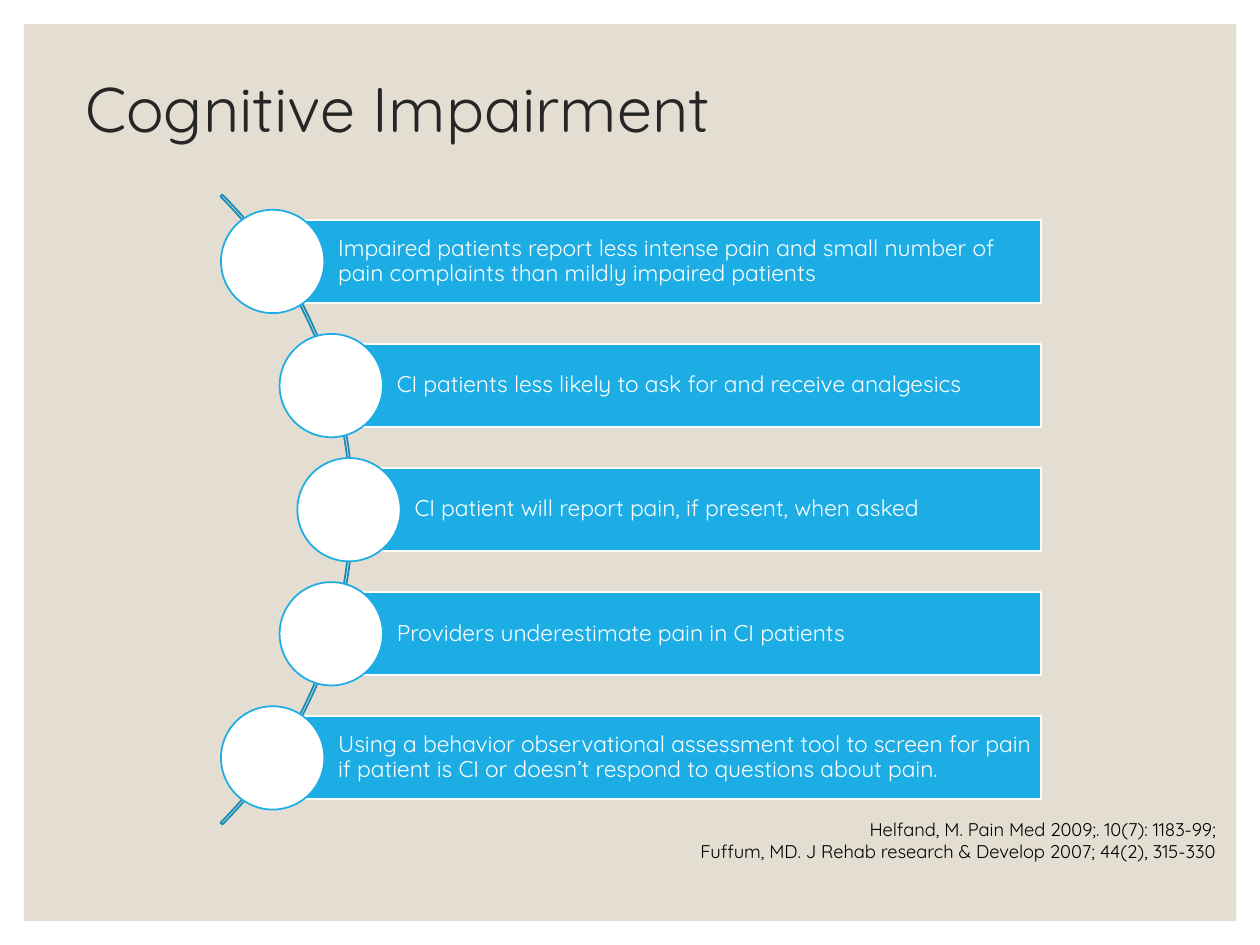
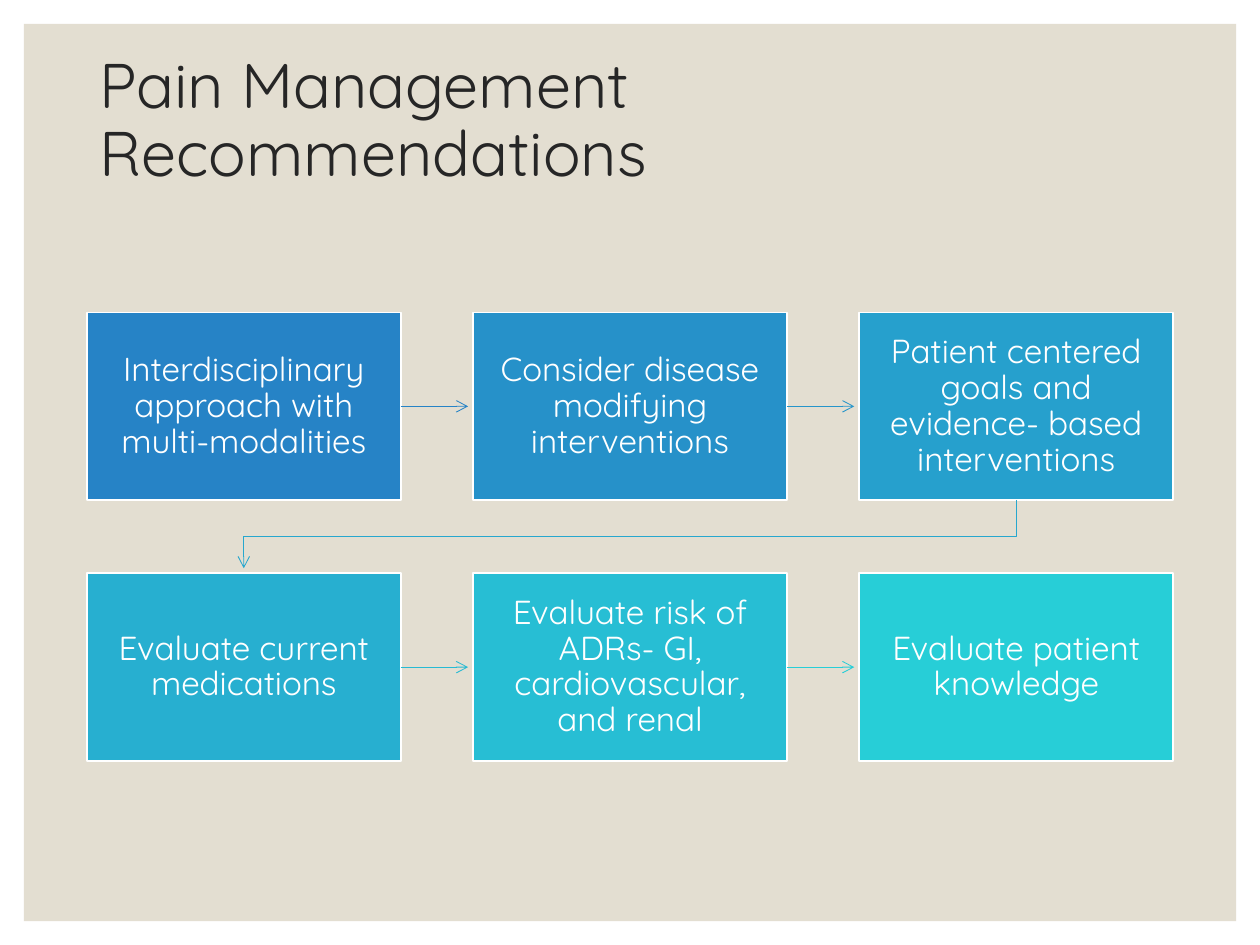
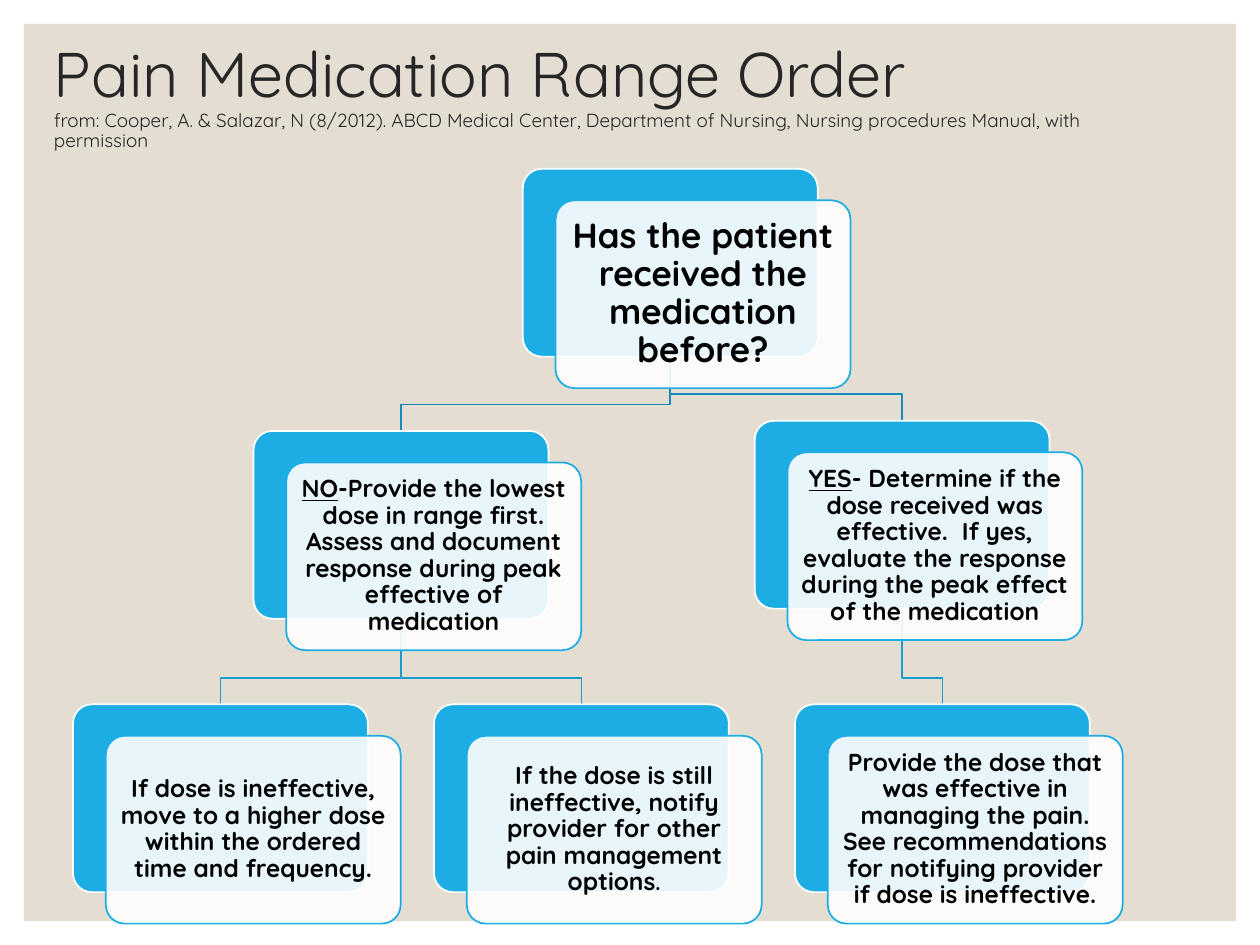
from math import sqrt

from lxml.etree import SubElement
from pptx import Presentation
from pptx.dml.color import RGBColor
from pptx.enum.shapes import MSO_CONNECTOR, MSO_SHAPE
from pptx.enum.text import MSO_ANCHOR, PP_ALIGN
from pptx.oxml.ns import qn
from pptx.util import Inches, Pt

RECTANGLE = MSO_SHAPE.RECTANGLE
ROUNDED = MSO_SHAPE.ROUNDED_RECTANGLE
OVAL = MSO_SHAPE.OVAL
BLOCK_ARC = MSO_SHAPE.BLOCK_ARC
STRAIGHT = MSO_CONNECTOR.STRAIGHT
LEFT, CENTER, RIGHT = PP_ALIGN.LEFT, PP_ALIGN.CENTER, PP_ALIGN.RIGHT
TOP, MIDDLE = MSO_ANCHOR.TOP, MSO_ANCHOR.MIDDLE
RIGHT_SIDE = 3

COLUMNS, ROWS = 100, 75
WHITE, BLACK, INK = "FFFFFF", "000000", "262626"
SAND, SKY, DEEP_SKY, MID_SKY = "E3DED1", "1CADE4", "168BB7", "199DCF"


def color(value):
    return RGBColor.from_string(value)


class Deck:
    """Holds the shared style and the current slide; lengths are grid columns and rows."""

    font_name = "Quicksand"
    title_format = {"size": 36, "ink": INK}

    def __init__(self):
        self.presentation = Presentation()
        self.presentation.slide_width = Inches(10)
        self.presentation.slide_height = Inches(7.5)
        self.column = self.presentation.slide_width / COLUMNS
        self.row = self.presentation.slide_height / ROWS
        self.slide = None

    def place(self, x, y):
        return round(x * self.column), round(y * self.row)

    def new_slide(self):
        self.slide = self.presentation.slides.add_slide(self.presentation.slide_layouts[6])
        self.shape(RECTANGLE, (1.9, 1.9, 96.2, 71.2), fill=SAND)

    def paint(self, shape, fill=None, line=None, width=1, opacity=None):
        shape.shadow.inherit = False
        if fill:
            shape.fill.solid()
            shape.fill.fore_color.rgb = color(fill)
        else:
            shape.fill.background()
        if opacity:
            solid_color = shape.element.spPr.find(qn("a:solidFill"))[0]
            SubElement(solid_color, qn("a:alpha"), val=str(opacity * 1000))
        if line:
            self.stroke(shape, line, width)
        else:
            shape.line.fill.background()

    def stroke(self, shape, line, width, arrow=False):
        shape.line.color.rgb = color(line)
        shape.line.width = Pt(width)
        if arrow:
            outline = shape.element.spPr.find(qn("a:ln"))
            SubElement(outline, qn("a:tailEnd"), type="arrow")

    def shape(self, kind, box, adjustments=(), **look):
        x, y, width, height = box
        shape = self.slide.shapes.add_shape(kind, *self.place(x, y), *self.place(width, height))
        for index, value in enumerate(adjustments):
            shape.adjustments[index] = value
        self.paint(shape, **look)
        return shape

    def set_text(self, shape, paragraphs, insets=(1, 0.5, 1, 0.5), align=LEFT, anchor=MIDDLE, spacing=0.9):
        """Fill a shape with paragraphs, each a list of (text, format) runs."""
        frame = shape.text_frame
        sides = ("left", "top", "right", "bottom")
        for side, inset in zip(sides, insets):
            setattr(frame, f"margin_{side}", self.place(inset, 0)[0])
        frame.word_wrap = True
        frame.vertical_anchor = anchor
        for index, runs in enumerate(paragraphs):
            paragraph = frame.add_paragraph() if index else frame.paragraphs[0]
            paragraph.alignment = align
            paragraph.line_spacing = spacing
            for text, run_format in runs:
                run = paragraph.add_run()
                run.text = text
                self.format_font(run.font, **run_format)

    def format_font(self, font, size, ink=BLACK, **values):
        font.color.rgb = color(ink)
        for name, value in {"name": self.font_name, "size": Pt(size), **values}.items():
            setattr(font, name, value)

    def text(self, box, paragraphs, **layout):
        x, y, width, height = box
        text_box = self.slide.shapes.add_textbox(*self.place(x, y), *self.place(width, height))
        self.set_text(text_box, paragraphs, **layout)

    def title(self, box, text, note=None):
        paragraphs = [[(text, self.title_format)]]
        if note:
            paragraphs.append([(note, {"size": 10.8, "ink": INK})])
        self.text(box, paragraphs)

    def elbow(self, start, end, bend, line, width, arrow=False):
        """Draw a line that goes down to the row bend, across, and down to its end."""
        corners = [(start[0], bend), (end[0], bend), end]
        builder = self.slide.shapes.build_freeform(*self.place(*start))
        builder.add_line_segments([self.place(*corner) for corner in corners], close=False)
        shape = builder.convert_to_shape()
        self.paint(shape)
        self.stroke(shape, line, width, arrow)

    def arrow_from(self, shape, start, end, line):
        connector = self.slide.shapes.add_connector(STRAIGHT, *self.place(*start), *self.place(*end))
        connector.begin_connect(shape, RIGHT_SIDE)
        self.stroke(connector, line, 0.5, arrow=True)
        SubElement(connector.element.spPr, qn("a:effectLst"))


def cognitive_impairment(deck):
    findings = [
        "Impaired patients report less intense pain and small number of pain complaints "
        "than mildly impaired patients",
        "CI patients less likely to ask for and receive analgesics",
        "CI patient will report pain, if present, when asked",
        "Providers underestimate pain in CI patients",
        "Using a behavior observational assessment tool to screen for pain if patient is CI "
        "or doesn’t respond to questions about pain.",
    ]
    arc_left, arc_top, arc_size = -42.7, 5.1, 70.7
    arc_x, arc_y = arc_left + arc_size / 2, arc_top + arc_size / 2
    path_radius, pitch = 35.05, 9.85
    bar_right, bar_height, circle_size = 82.6, 6.6, 8.2

    deck.new_slide()
    deck.title((5.8, 2.5, 86.7, 12.8), "Cognitive Impairment")
    deck.shape(BLOCK_ARC, (arc_left, arc_top, arc_size, arc_size), (189, 27, 0.003), line=DEEP_SKY)
    for index, finding in enumerate(findings):
        offset = (index - 2) * pitch
        x, y = arc_x + sqrt(path_radius**2 - offset**2), arc_y + offset
        bar = deck.shape(RECTANGLE, (x, y - bar_height / 2, bar_right - x, bar_height), fill=SKY, line=WHITE)
        deck.set_text(bar, [[(finding, {"size": 13, "ink": WHITE})]], insets=(5.2, 0.4, 0.4, 0.4))
        circle = (x - circle_size / 2, y - circle_size / 2, circle_size, circle_size)
        deck.shape(OVAL, circle, fill=WHITE, line=SKY)
    references = [
        "Helfand, M. Pain Med 2009;. 10(7): 1183-99;",
        "Fuffum, MD. J Rehab research & Develop 2007; 44(2), 315-330",
    ]
    deck.text((2.5, 64.4, 95, 4.5), [[(reference, {"size": 10.5})] for reference in references],
              align=RIGHT, anchor=TOP, spacing=1.0)


def recommendations(deck):
    steps = [
        ("Interdisciplinary approach with multi-modalities", "2683C6", "2683C6"),
        ("Consider disease modifying interventions", "2691C9", "2695CA"),
        ("Patient centered goals and evidence- based interventions", "26A0CD", "27A7CE"),
        ("Evaluate current medications", "27AFD0", "27BAD3"),
        ("Evaluate risk of ADRs- GI, cardiovascular, and renal", "27BED4", "27CED7"),
        ("Evaluate patient knowledge", "27CED7", None),
    ]
    per_row, left, top = 3, 6.9, 24.8
    width, height, pitch_x, pitch_y, tip_gap = 24.9, 14.9, 30.65, 20.7, 0.4

    deck.new_slide()
    deck.title((6.9, 5.8, 86.2, 7.8), "Pain Management Recommendations")
    for index, (step, fill, arrow_color) in enumerate(steps):
        row, column = divmod(index, per_row)
        x, y = left + column * pitch_x, top + row * pitch_y
        box = deck.shape(RECTANGLE, (x, y, width, height), fill=fill, line=WHITE)
        deck.set_text(box, [[(step, {"size": 19, "ink": WHITE})]], insets=(1.2, 1.3, 1.2, 1.3), align=CENTER)
        if arrow_color and column < per_row - 1:
            middle = y + height / 2
            deck.arrow_from(box, (x + width, middle), (x + pitch_x - tip_gap, middle), arrow_color)
        elif arrow_color:
            start, end = (x + width / 2, y + height), (left + width / 2, y + pitch_y - tip_gap)
            deck.elbow(start, end, y + (height + pitch_y) / 2, arrow_color, 0.5, arrow=True)


def range_order(deck):
    bold = {"size": 14, "bold": True}
    underlined = {**bold, "underline": True}
    leaf_left, leaf_top, leaf_pitch = 5.8, 55.9, 28.65
    width, height, shift_x, shift_y = 23.4, 14.9, 2.6, 2.5
    cards = {
        "question": (41.5, 13.4, [("Has the patient received the medication before?", {**bold, "size": 20})]),
        "no": (leaf_left + leaf_pitch / 2, 34.2, [
            ("NO", underlined),
            ("-Provide the lowest dose in range first. Assess and document response "
             "during peak effective of medication", bold)]),
        "yes": (59.9, 33.4, [
            ("YES", underlined),
            ("- Determine if the dose received was effective.  If yes, evaluate the response "
             "during the peak effect of the medication", bold)]),
    }
    leaves = {
        "higher dose": [("If dose is ineffective, move to a higher dose within the ordered "
                         "time and frequency.", bold)],
        "notify": [("If the dose is still ineffective, notify provider for other "
                    "pain management options", bold), (".", {**bold, "size": 12})],
        "repeat": [("Provide the dose that was effective in managing the pain. See recommendations "
                    "for notifying provider if dose is ineffective.", bold)],
    }
    for index, (name, runs) in enumerate(leaves.items()):
        cards[name] = (leaf_left + index * leaf_pitch, leaf_top, runs)
    links = [
        ("yes", "repeat", MID_SKY),
        ("question", "yes", DEEP_SKY),
        ("no", "notify", MID_SKY),
        ("no", "higher dose", MID_SKY),
        ("question", "no", DEEP_SKY),
    ]

    deck.new_slide()
    deck.title((3.3, 4.4, 90, 6.7), "Pain Medication Range Order",
               "from: Cooper, A. & Salazar, N (8/2012). ABCD Medical Center, Department of Nursing, "
               "Nursing procedures Manual, with permission")
    for parent, child, line in links:
        (parent_x, parent_y, _), (child_x, child_y, _) = cards[parent], cards[child]
        start, end = (parent_x + width / 2, parent_y + height), (child_x + width / 2, child_y)
        deck.elbow(start, end, child_y - 2.1, line, 1)
    for name, (x, y, runs) in cards.items():
        deck.shape(ROUNDED, (x, y, width, height), (0.1,), fill=SKY, line=WHITE)
        front = deck.shape(ROUNDED, (x + shift_x, y + shift_y, width, height), (0.1,),
                           fill=WHITE, line=SKY, opacity=90)
        inset = 0.8 if name == "question" else 0.6
        deck.set_text(front, [runs], insets=(inset,) * 4, align=CENTER)


def main():
    deck = Deck()
    cognitive_impairment(deck)
    recommendations(deck)
    range_order(deck)
    deck.presentation.save("out.pptx")


if __name__ == "__main__":
    main()
